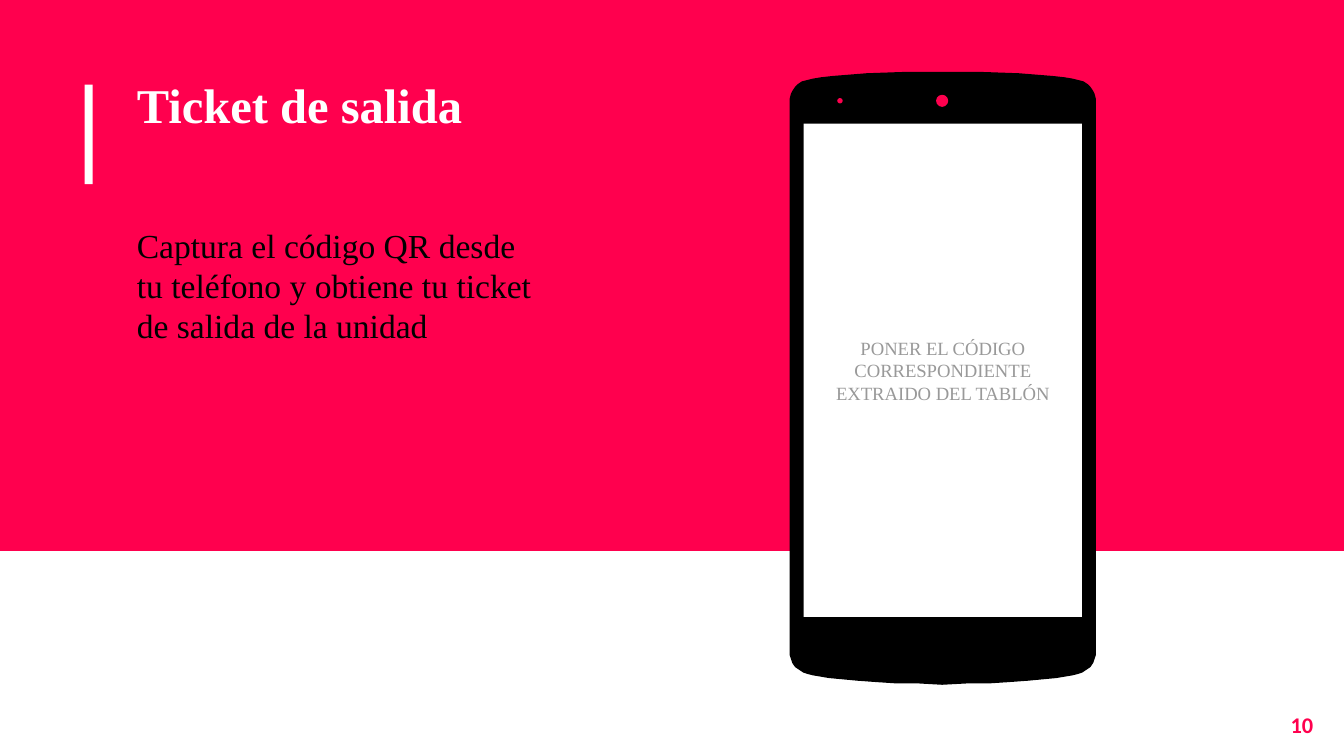
from dataclasses import dataclass

from pptx import Presentation
from pptx.dml.color import RGBColor
from pptx.enum.shapes import MSO_SHAPE
from pptx.enum.text import MSO_ANCHOR, PP_ALIGN
from pptx.util import Inches, Pt


@dataclass(frozen=True)
class Theme:
    red: str = "FF004E"
    white: str = "FFFFFF"
    black: str = "000000"
    gray: str = "999999"
    serif: str = "Times New Roman"
    sans: str = "Calibri"
    title: int = 26
    body: int = 18
    page: int = 12
    note: int = 10


THEME = Theme()
MID = 7.01
EDGE = [
    (7.01, 0.54), (6.73, 0.54), (6.45, 0.55), (6.2, 0.57), (6.11, 0.58),
    (6.05, 0.59), (6.01, 0.6), (5.97, 0.61), (5.94, 0.63), (5.92, 0.65),
    (5.9, 0.68), (5.89, 0.7), (5.88, 0.74), (5.88, 0.78), (5.88, 4.83),
    (5.88, 4.87), (5.89, 4.9), (5.9, 4.93), (5.92, 4.96), (5.95, 4.98),
    (5.98, 5), (6.01, 5.01), (6.05, 5.02), (6.17, 5.04), (6.38, 5.06),
    (6.52, 5.07), (6.67, 5.08), (6.83, 5.08), (7.01, 5.09),
]


def paint(shape, color, line=None):
    shape.shadow.inherit = False
    shape.fill.solid()
    shape.fill.fore_color.rgb = RGBColor.from_string(color)
    if line:
        shape.line.color.rgb = RGBColor.from_string(line)
        shape.line.width = Pt(0.75)
    else:
        shape.line.fill.background()


def add_form(slide, kind, box, color):
    shape = slide.shapes.add_shape(kind, *map(Inches, box))
    paint(shape, color)
    return shape


def add_box(slide, box):
    return slide.shapes.add_textbox(*map(Inches, box))


def write(shape, text, size, color, font=THEME.serif, bold=False,
          align=PP_ALIGN.LEFT, anchor=MSO_ANCHOR.TOP, before=0):
    frame = shape.text_frame
    frame.word_wrap = True
    frame.vertical_anchor = anchor
    frame.margin_left = frame.margin_right = Inches(0.1)
    frame.margin_top = frame.margin_bottom = Inches(0.1)
    para = frame.paragraphs[0]
    para.alignment = align
    para.space_before = Pt(before)
    run = para.add_run()
    run.text = text
    run.font.name = font
    run.font.size = Pt(size)
    run.font.bold = bold
    run.font.color.rgb = RGBColor.from_string(color)


def add_phone(slide):
    right = [(2 * MID + 0.01 - x, y) for x, y in reversed(EDGE[1:-1])]
    first, *rest = [(Inches(x), Inches(y)) for x, y in EDGE + right]
    pen = slide.shapes.build_freeform(*first)
    pen.add_line_segments(rest, close=True)
    paint(pen.convert_to_shape(), THEME.black, line=THEME.black)
    for x, size in ((6.25, 0.04), (MID, 0.09)):
        box = (x - size / 2, 0.75 - size / 2, size, size)
        add_form(slide, MSO_SHAPE.OVAL, box, THEME.red)
    return add_form(slide, MSO_SHAPE.RECTANGLE, (5.98, 0.92, 2.07, 3.67),
                    THEME.white)


def main():
    deck = Presentation()
    deck.slide_width = Inches(10)
    deck.slide_height = deck.slide_width * 9 // 16
    slide = deck.slides.add_slide(deck.slide_layouts[6])

    add_form(slide, MSO_SHAPE.RECTANGLE, (0, 0, 10, 4.1), THEME.red)
    add_form(slide, MSO_SHAPE.RECTANGLE, (0.63, 0.63, 0.06, 0.74), THEME.white)
    screen = add_phone(slide)
    write(screen, "PONER EL CÓDIGO CORRESPONDIENTE EXTRAIDO DEL TABLÓN",
          THEME.note, THEME.gray, align=PP_ALIGN.CENTER,
          anchor=MSO_ANCHOR.MIDDLE)

    write(add_box(slide, (0.92, 0.46, 3.53, 0.94)), "Ticket de salida",
          THEME.title, THEME.white, bold=True)
    write(add_box(slide, (0.92, 1.57, 3.26, 3.82)),
          "Captura el código QR desde tu teléfono y obtiene tu ticket "
          "de salida de la unidad",
          THEME.body, THEME.black, before=6)
    write(add_box(slide, (9.27, 5.19, 0.6, 0.43)), "10", THEME.page,
          THEME.red, font=THEME.sans, bold=True, align=PP_ALIGN.RIGHT)

    deck.save("out.pptx")


if __name__ == "__main__":
    main()
